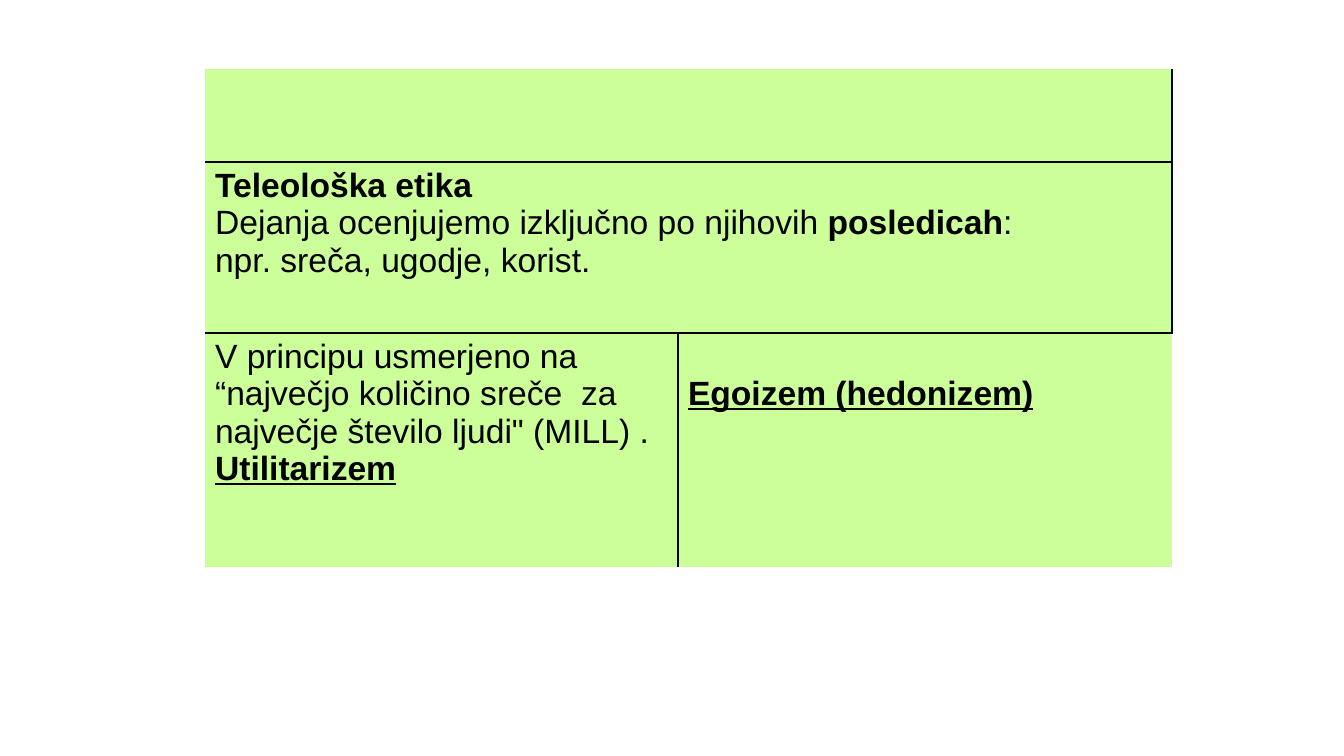
"""Build a slide with a table on teleological ethics."""
from dataclasses import dataclass

from lxml import etree
from pptx import Presentation
from pptx import util as u
from pptx.dml.color import RGBColor
from pptx.oxml.ns import qn

PX = 914400 / 100.8
COLUMNS = [473, 494]
ROWS = [93, 171, 234]
THIN, THICK = 1.0, 2.25
INK, GREEN = "000000", "CCFF99"


@dataclass
class Run:
    text: str
    bold: bool = False
    underline: bool = False


@dataclass
class Entry:
    row: int
    column: int
    borders: dict[str, float]
    paragraphs: list[list[Run]]
    span: int = 1
    top_margin: int = 5


ENTRIES = [
    Entry(0, 0, {"R": THICK, "B": THIN}, [], span=2),
    Entry(1, 0, {"R": THICK, "T": THIN, "B": THIN}, [
        [Run("Teleološka etika", bold=True)],
        [Run("Dejanja ocenjujemo izključno po njihovih "),
         Run("posledicah", bold=True), Run(":")],
        [Run("npr. sreča, ugodje, korist.")],
    ], span=2),
    Entry(2, 0, {"T": THIN, "R": THIN}, [
        [Run("V principu usmerjeno na “največjo količino sreče  za "
             "največje število ljudi\" (MILL) .")],
        [Run("Utilitarizem", bold=True, underline=True)],
    ]),
    Entry(2, 1, {"L": THIN, "T": THIN}, [
        [Run("Egoizem (hedonizem)", bold=True, underline=True)],
    ], top_margin=42),
]


def px(length: int) -> u.Emu:
    return u.Emu(round(length * PX))


def color(value: str) -> RGBColor:
    return RGBColor.from_string(value)


def draw_borders(cell, borders: dict[str, float]) -> None:
    properties = cell._tc.get_or_add_tcPr()
    for side in "LRTB":
        line = etree.SubElement(properties, qn(f"a:ln{side}"))
        if side in borders:
            line.set("w", str(u.Pt(borders[side])))
            fill = etree.SubElement(line, qn("a:solidFill"))
            etree.SubElement(fill, qn("a:srgbClr"), val=INK)
        else:
            etree.SubElement(line, qn("a:noFill"))


def write_paragraph(paragraph, runs: list[Run]) -> None:
    paragraph.font.name = "Arial"
    paragraph.font.size = u.Pt(24)
    paragraph.font.color.rgb = color(INK)
    for item in runs:
        run = paragraph.add_run()
        run.text = item.text
        run.font.bold = item.bold
        run.font.underline = item.underline


def draw_entry(table, entry: Entry) -> None:
    last_column = entry.column + entry.span - 1
    cell = table.cell(entry.row, entry.column)
    if entry.span > 1:
        cell.merge(table.cell(entry.row, last_column))
    for column in range(entry.column, last_column + 1):
        part = table.cell(entry.row, column)
        draw_borders(part, entry.borders)
        part.fill.solid()
        part.fill.fore_color.rgb = color(GREEN)
    cell.margin_top = px(entry.top_margin)
    frame = cell.text_frame
    for index, runs in enumerate(entry.paragraphs):
        paragraph = frame.add_paragraph() if index else frame.paragraphs[0]
        write_paragraph(paragraph, runs)


def main() -> None:
    presentation = Presentation()
    presentation.slide_width, presentation.slide_height = px(1344), px(756)
    slide = presentation.slides.add_slide(presentation.slide_layouts[6])
    table = slide.shapes.add_table(len(ROWS), len(COLUMNS), px(205), px(69),
                                   px(sum(COLUMNS)), px(sum(ROWS))).table
    table.first_row = table.horz_banding = False
    for column, width in zip(table.columns, COLUMNS):
        column.width = px(width)
    for row, height in zip(table.rows, ROWS):
        row.height = px(height)
    for entry in ENTRIES:
        draw_entry(table, entry)
    presentation.save("out.pptx")


if __name__ == "__main__":
    main()
